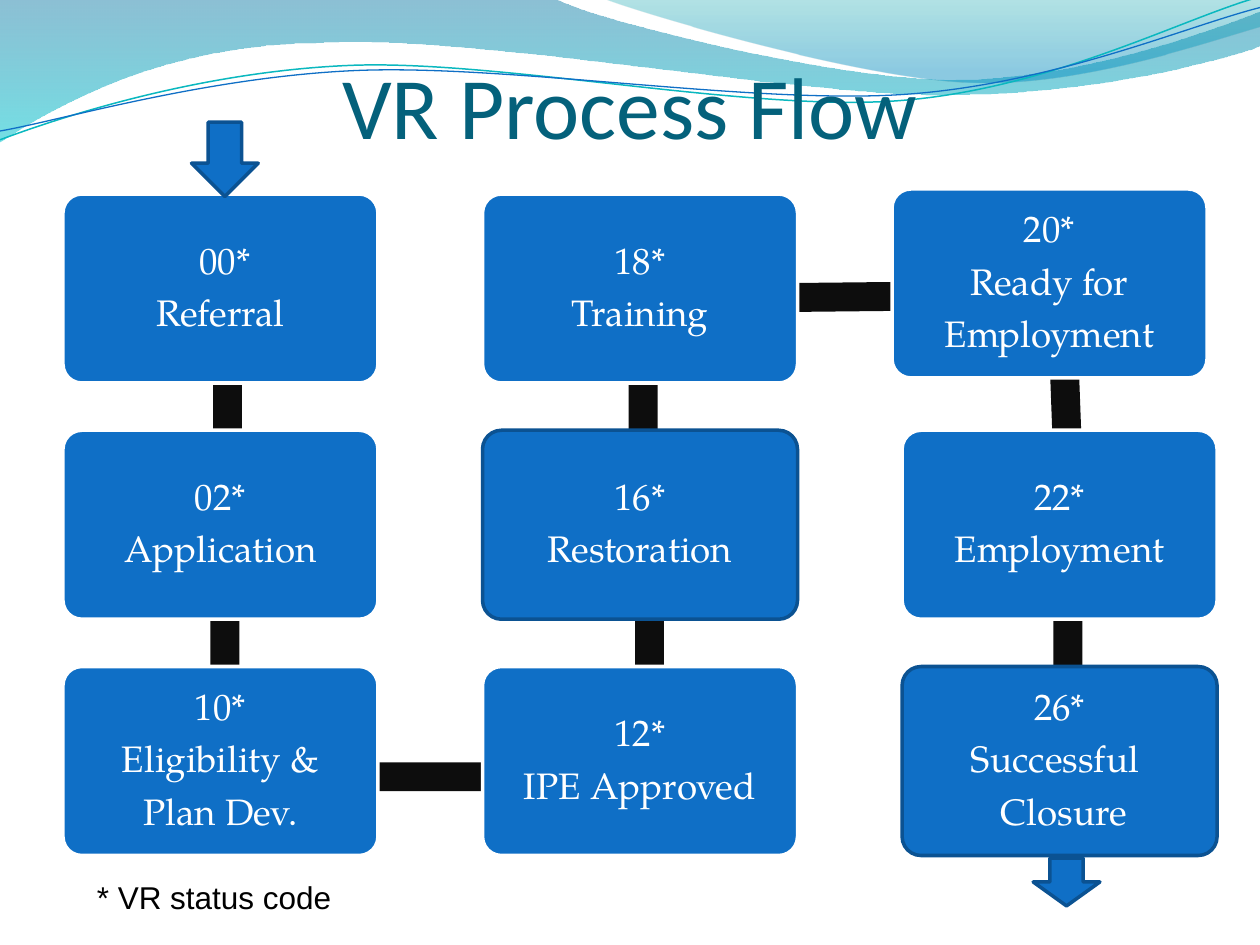
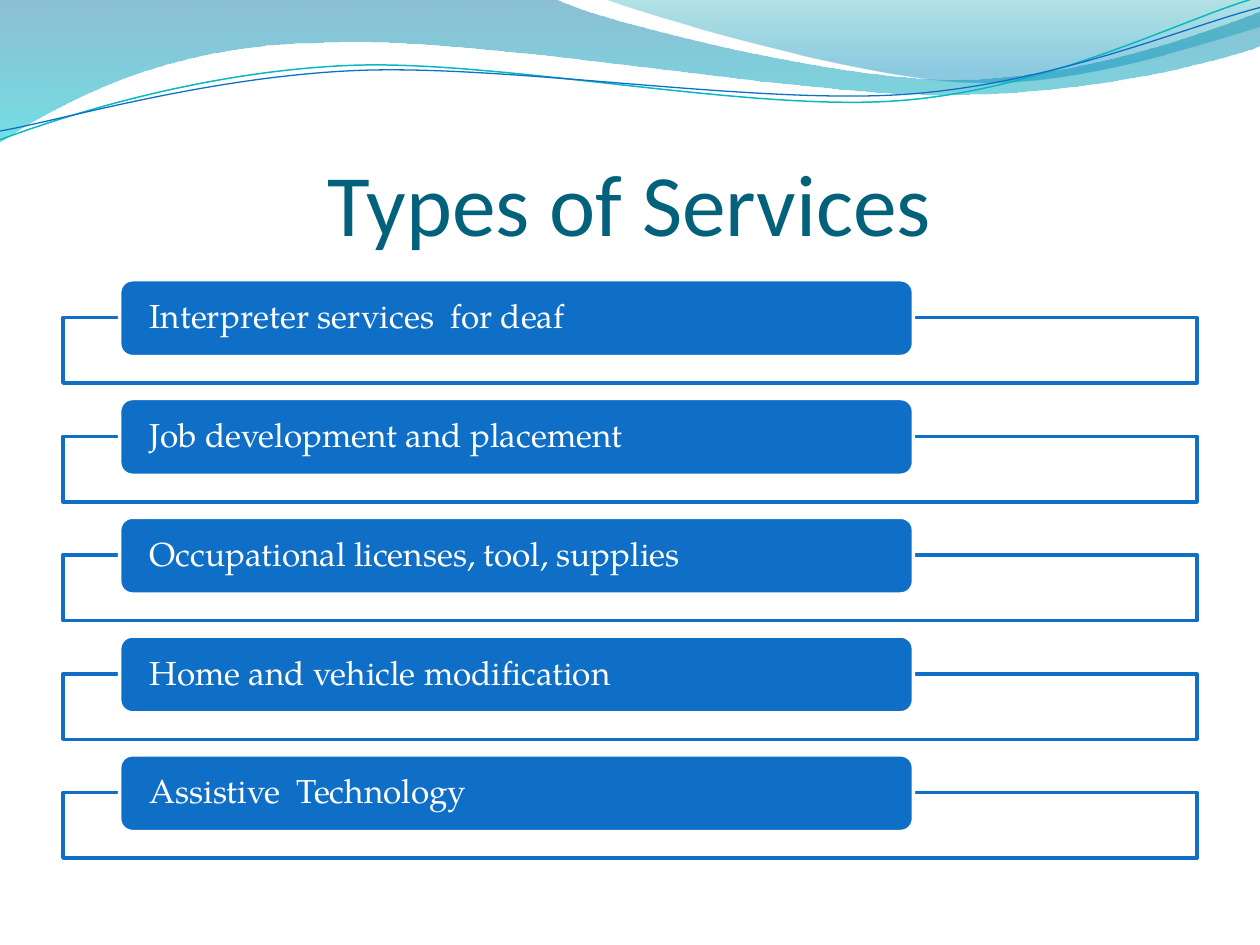
from lxml import etree
from pptx import Presentation
from pptx.dml.color import RGBColor
from pptx.enum import shapes, text
from pptx.oxml import ns
from pptx.util import Inches, Pt

BLUE = RGBColor(0x0F, 0x6F, 0xC6)
NAVY = RGBColor(0x0B, 0x52, 0x92)
TEAL = RGBColor(0x04, 0x61, 0x7B)
AQUA = RGBColor(0x0A, 0xB8, 0xBF)
WHITE = RGBColor(0xFF, 0xFF, 0xFF)
BLACK = RGBColor(0, 0, 0)
INK = RGBColor(0x0D, 0x0D, 0x0D)
DEEP_BLUE = RGBColor(0, 0x74, 0xA1)
CYAN = RGBColor(0, 0xC6, 0xCF)
SEA_GREEN = RGBColor(0, 0xA1, 0xA9)
SKY_BLUE = RGBColor(0, 0x8B, 0xBF)

TITLE_FONT, BODY_FONT, NOTE_FONT = "Calibri", "TeX Gyre Pagella", "Arial"
KIND = shapes.MSO_SHAPE

# Each outline is a start point followed by lines (2 numbers) or cubic curves (6).
# Bands: outline, then gradient stops as (position, colour, opacity in percent).
BANDS = [
    ([(0, -0.01), (4.4, -0.01), (4.76, 0.17, 6.64, 0.63, 7.58, 0.63),
      (8.53, 0.63, 9.58, 0.26, 10, 0.09), (10.01, 0.36),
      (9.83, 0.44, 8.7, 0.76, 7.46, 0.75), (6.22, 0.75, 3.82, 0.28, 2.57, 0.34),
      (1.29, 0.35, 0.46, 0.83, -0.01, 1.13), (0, -0.01)],
     [(0, DEEP_BLUE, 45), (1, CYAN, 55)]),
    ([(4.79, -0.01), (5.09, 0.11, 6.82, 0.62, 7.69, 0.65),
      (8.56, 0.69, 9.61, 0.32, 10, 0.21), (10, 0), (4.79, -0.01)],
     [(0, SEA_GREEN, 30), (0.8, SKY_BLUE, 45)]),
]
# Ripples: outline, line colour, line width in points.
RIPPLES = [
    ([(0, 1.11), (0.48, 0.93, 1.58, 0.57, 2.77, 0.52),
      (3.95, 0.47, 5.93, 0.89, 7.13, 0.8), (8.33, 0.71, 9.38, 0.15, 9.98, -0.02)],
     AQUA, 0.85),
    ([(0, 1.04), (0.47, 0.96, 1.64, 0.61, 2.83, 0.56),
      (4.03, 0.51, 5.97, 0.83, 7.17, 0.75), (8.36, 0.67, 9.41, 0.21, 10, 0.06)],
     BLUE, 0.75),
]

# Steps: column, row, shift right, shift down, border, lines.
STEPS = [
    (0, 0, 0, 0, WHITE, [" 00*", "Referral"]),
    (0, 1, 0, 0, WHITE, ["02*", "Application"]),
    (0, 2, 0, 0, WHITE, ["10*", "Eligibility &", "Plan Dev."]),
    (1, 2, 0, 0, WHITE, ["12*", "IPE Approved"]),
    (1, 1, 0, 0, NAVY, ["16*", "Restoration"]),
    (1, 0, 0, 0, WHITE, ["18*", "Training"]),
    (2, 0, -0.08, -0.04, WHITE, ["20*", "Ready for", "Employment"]),
    (2, 1, 0, 0, WHITE, ["22*", "Employment"]),
    (2, 2, 0, 0, NAVY, ["26*", "Successful ", " Closure"]),
]
# Links: left and top within the flow, length, rotation.
LINKS = [
    (0.37, 1.22, 1.87, 90), (0.35, 3.06, 1.87, 90), (0.52, 4.51, 3.32, 0),
    (3.72, 3.07, 1.87, 270), (3.67, 1.6, 1.87, 270), (3.84, 0.71, 3.25, 359.4),
    (6.99, 1.2, 1.91, 87.9), (7.04, 3.06, 1.87, 90),
]
SERVICES = [
    "Interpreter services  for deaf",
    "Job development and placement",
    "Occupational licenses, tool, supplies",
    "Home and vehicle modification",
    "Assistive  Technology",
]


def set_opacity(shape, percents):
    """Give the shape's colours, in document order, these opacities."""
    for colour, percent in zip(shape.element.iter(ns.qn("a:srgbClr")), percents):
        etree.SubElement(colour, ns.qn("a:alpha")).set("val", str(percent * 1000))


def bend(shape, outline):
    """Merge each run of three lines that stands for a cubic curve."""
    lines = iter(list(shape.element.iter(ns.qn("a:lnTo"))))
    for segment in outline[1:]:
        first = next(lines)
        if len(segment) == 2:
            continue
        curve = etree.Element(ns.qn("a:cubicBezTo"))
        first.addprevious(curve)
        for line in (first, next(lines), next(lines)):
            curve.append(line[0])
            line.getparent().remove(line)


def add_outline(page, outline, close):
    points = [(Inches(x), Inches(y)) for segment in outline
              for x, y in zip(segment[::2], segment[1::2])]
    builder = page.shapes.build_freeform(*points[0])
    builder.add_line_segments(points[1:], close=close)
    shape = builder.convert_to_shape()
    bend(shape, outline)
    shape.shadow.inherit = False
    return shape


def add_waves(page, layout):
    """Draw the waves and move them to the layout, behind its title."""
    waves = []
    for outline, stops in BANDS:
        band = add_outline(page, outline, True)
        band.line.fill.background()
        band.fill.gradient()
        band.fill.gradient_angle = 270
        for stop, (position, colour, _) in zip(band.fill.gradient_stops, stops):
            stop.position = position
            stop.color.rgb = colour
        set_opacity(band, [opacity for _, _, opacity in stops])
        waves.append(band)
    for outline, colour, width in RIPPLES:
        ripple = add_outline(page, outline, False)
        ripple.fill.background()
        ripple.line.color.rgb = colour
        ripple.line.width = Pt(width)
        waves.append(ripple)
    for place, wave in enumerate(waves, start=2):
        layout.shapes.element.insert(place, wave.element)


def add_block(page, kind, box, fill, border=None):
    block = page.shapes.add_shape(kind, *(Inches(length) for length in box))
    block.shadow.inherit = False
    block.fill.solid()
    block.fill.fore_color.rgb = fill
    if border is None:
        block.line.fill.background()
    else:
        block.line.color.rgb = border
        block.line.width = Pt(2)
    return block


def set_margins(frame, left, top, right, bottom):
    frame.margin_left, frame.margin_top = Inches(left), Inches(top)
    frame.margin_right, frame.margin_bottom = Inches(right), Inches(bottom)


def write(frame, lines, font, size, colour, align):
    frame.text = "\n".join(lines)
    frame.word_wrap = True
    for para in frame.paragraphs:
        para.alignment = align
        for span in para.runs:
            span.font.name, span.font.size = font, Pt(size)
            span.font.color.rgb = colour


def write_label(block, lines, size, align, margins):
    frame = block.text_frame
    write(frame, lines, BODY_FONT, size, WHITE, align)
    frame.vertical_anchor = text.MSO_ANCHOR.MIDDLE
    set_margins(frame, *margins)
    for para in frame.paragraphs:
        para.line_spacing = 0.9
        para.space_after = Pt(0.35 * size)


def set_title(page, words, box):
    title = page.shapes.title
    title.left, title.top, title.width, title.height = map(Inches, box)
    frame = title.text_frame
    write(frame, [words], TITLE_FONT, 50, TEAL, text.PP_ALIGN.CENTER)
    frame.auto_size = text.MSO_AUTO_SIZE.NONE
    frame.vertical_anchor = text.MSO_ANCHOR.BOTTOM
    set_margins(frame, 0, 0.05, 0, 0)


def add_flow(page, box):
    """Lay the steps out on a three by three grid over their links."""
    left, top, width, height = box
    step_width, step_height = 2.5, 1.5
    column_pitch, row_pitch = (width - step_width) / 2, (height - step_height) / 2
    for x, y, length, angle in LINKS:
        link = add_block(page, KIND.RECTANGLE, (left + x, top + y, length, 0.23), INK)
        link.rotation = angle
    for column, row, right, down, border, lines in STEPS:
        place = (left + column * column_pitch + right, top + row * row_pitch + down,
                 step_width, step_height)
        step = add_block(page, KIND.ROUNDED_RECTANGLE, place, BLUE, border)
        step.adjustments[0] = 0.1
        write_label(step, lines, 21, text.PP_ALIGN.CENTER, [0.09] * 4)


def add_footnote(page, words, box):
    note = page.shapes.add_textbox(*map(Inches, box))
    write(note.text_frame, [words], NOTE_FONT, 18, BLACK, text.PP_ALIGN.LEFT)


def add_services(page, box):
    """Stack one frame with an overlapping label for each service."""
    left, top, width, height = box
    label_height, frame_drop, frame_height = 0.61, 0.3, 0.52
    pitch = (height - frame_drop - frame_height) / (len(SERVICES) - 1)
    for row, service in enumerate(SERVICES):
        y = top + row * pitch
        frame = add_block(page, KIND.RECTANGLE,
                          (left, y + frame_drop, width, frame_height), WHITE, BLUE)
        set_opacity(frame, [90])
        label = add_block(page, KIND.ROUNDED_RECTANGLE,
                          (left + 0.45, y, 0.7 * width, label_height), BLUE, WHITE)
        write_label(label, [service], 19, text.PP_ALIGN.LEFT, (0.21, 0, 0.21, 0))


def build_process_page(page):
    set_title(page, "VR Process Flow", (0.5, 0.25, 9, 1))
    add_flow(page, (0.5, 1.54, 9.16, 5.25))
    add_footnote(page, "* VR status code", (0.67, 6.92, 2.17, 0.4))
    for arrow_box in [(1.52, 0.97, 0.53, 0.59), (8.2, 6.81, 0.53, 0.38)]:
        add_block(page, KIND.DOWN_ARROW, arrow_box, BLUE, NAVY)


def build_services_page(page):
    set_title(page, "Types of Services", (0.5, 0.77, 9, 1.25))
    add_services(page, (0.5, 2.22, 9, 4.59))


def main():
    deck = Presentation()
    deck.slide_width, deck.slide_height = Inches(10), Inches(7.5)
    layout = deck.slide_layouts.get_by_name("Title Only")
    for holder in list(layout.placeholders):
        if holder.placeholder_format.type != shapes.PP_PLACEHOLDER.TITLE:
            layout.shapes.element.remove(holder.element)
    process_page = deck.slides.add_slide(layout)
    add_waves(process_page, layout)
    build_process_page(process_page)
    build_services_page(deck.slides.add_slide(layout))
    deck.save("out.pptx")


if __name__ == "__main__":
    main()
